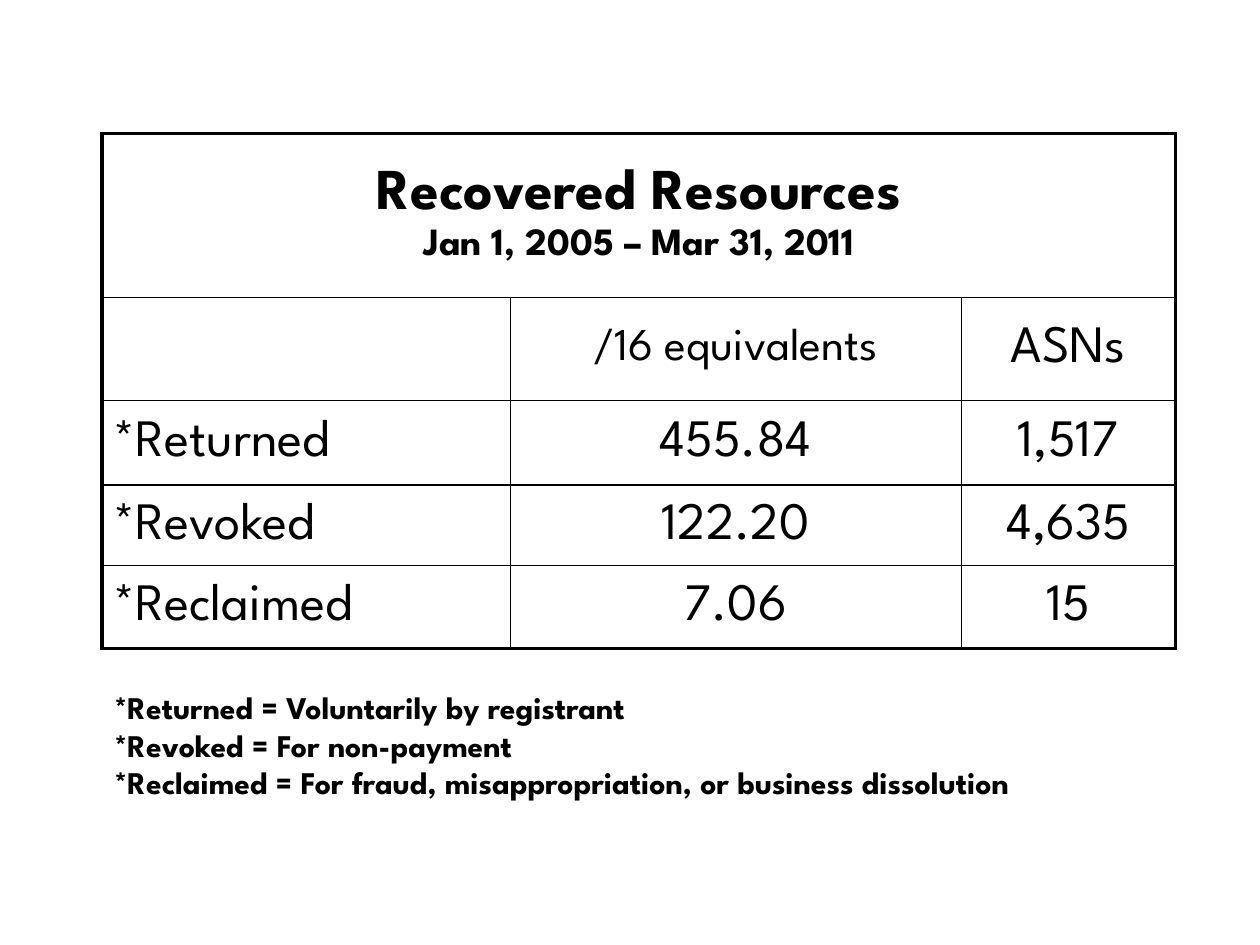
from lxml import etree
from pptx import Presentation
from pptx.dml.color import RGBColor
from pptx.enum.text import MSO_ANCHOR, MSO_AUTO_SIZE, PP_ALIGN
from pptx.oxml.ns import qn
from pptx.util import Inches, Pt

BLACK = RGBColor(0x00, 0x00, 0x00)
FONT = "League Spartan"
LEFT, CENTER = PP_ALIGN.LEFT, PP_ALIGN.CENTER
MIDDLE = MSO_ANCHOR.MIDDLE
GROW = MSO_AUTO_SIZE.SHAPE_TO_FIT_TEXT
THICK, THIN = 2.25, 1

COLUMN_WIDTHS = [3.24, 3.58, 1.7]
ROW_HEIGHTS = [1.3, 0.82, 0.67, 0.64, 0.66]
TITLE = [("Recovered Resources", 33), ("Jan 1, 2005 – Mar 31, 2011", 22)]
ROWS = [
    [None, ("/16 equivalents", 26), ("ASNs", 30)],
    [("*Returned", 30), ("455.84", 30), ("1,517", 30)],
    [("*Revoked", 30), ("122.20", 30), ("4,635", 30)],
    [("*Reclaimed", 30), ("7.06", 30), ("15", 30)],
]
NOTES = [
    "*Returned = Voluntarily by registrant",
    "*Revoked = For non-payment",
    "*Reclaimed = For fraud, misappropriation, or business dissolution",
]


class SlideBuilder:
    def __init__(self, page):
        self.page = page

    def add_lines(self, frame, lines, bold, align=LEFT, line_spacing=None, gap=0):
        """Add (text, size) lines; gap is a share of the text size."""
        for index, (text, size) in enumerate(lines):
            para = frame.paragraphs[0] if index == 0 else frame.add_paragraph()
            layout = {"alignment": align, "line_spacing": line_spacing}
            if gap:
                layout["space_after"] = Pt(size * gap)
                if index:
                    layout["space_before"] = Pt(size * gap)
            for name, value in layout.items():
                setattr(para, name, value)
            span = para.add_run()
            span.text = text
            style = {"name": FONT, "size": Pt(size), "bold": bold}
            for name, value in style.items():
                setattr(span.font, name, value)
            span.font.color.rgb = BLACK

    def text(self, left, top, width, height, lines, bold=False):
        box = self.page.shapes.add_textbox(
            Inches(left), Inches(top), Inches(width), Inches(height))
        box.text_frame.word_wrap = True
        box.text_frame.auto_size = GROW
        self.add_lines(box.text_frame, lines, bold)

    def table(self, left, top, widths, heights):
        table = self.page.shapes.add_table(
            len(heights), len(widths), Inches(left), Inches(top),
            Inches(sum(widths)), Inches(sum(heights))).table
        table.first_row = table.horz_banding = False
        for column, width in zip(table.columns, widths):
            column.width = Inches(width)
        for row, height in zip(table.rows, heights):
            row.height = Inches(height)
        return table

    def cell(self, cell, lines, edges, bold=False, align=CENTER):
        cell.fill.background()
        cell.vertical_anchor = MIDDLE
        cell.margin_left = cell.margin_right = Inches(0.09)
        cell.margin_top = cell.margin_bottom = Inches(0.05)
        self.add_lines(cell.text_frame, lines, bold, align, 0.95, 0.1)
        self.borders(cell, edges)

    def borders(self, cell, edges):
        """Draw left, right, top and bottom edges, ahead of the cell fill."""
        properties = cell._tc.get_or_add_tcPr()
        for index, (side, width) in enumerate(zip("LRTB", edges)):
            line = etree.Element(qn(f"a:ln{side}"), w=str(Pt(width)))
            fill = etree.SubElement(line, qn("a:solidFill"))
            etree.SubElement(fill, qn("a:srgbClr"), val=str(BLACK))
            properties.insert(index, line)


def main():
    deck = Presentation()
    deck.slide_width, deck.slide_height = Inches(10), Inches(7.5)
    builder = SlideBuilder(deck.slides.add_slide(deck.slide_layouts[6]))

    # Table with a title row across all columns
    table = builder.table(0.81, 1.06, COLUMN_WIDTHS, ROW_HEIGHTS)
    last_column, last_row = len(COLUMN_WIDTHS) - 1, len(ROW_HEIGHTS) - 1
    table.cell(0, 0).merge(table.cell(0, last_column))
    builder.cell(table.cell(0, 0), TITLE, [THICK, THICK, THICK, THIN], bold=True)
    for column in range(1, last_column + 1):
        builder.borders(table.cell(0, column), [THIN, THICK, THICK, THIN])

    # Column heads and values, with a thick outer frame
    for row, entries in enumerate(ROWS, start=1):
        for column, entry in enumerate(entries):
            edges = [THICK if column == 0 else THIN,
                     THICK if column == last_column else THIN,
                     THIN,
                     THICK if row == last_row else THIN]
            builder.cell(table.cell(row, column), [entry] if entry else [],
                         edges, align=CENTER if column else LEFT)

    # Definitions below the table
    builder.text(0.81, 5.41, 8.28, 1.01, [(note, 18) for note in NOTES], bold=True)

    deck.save("out.pptx")


if __name__ == "__main__":
    main()
